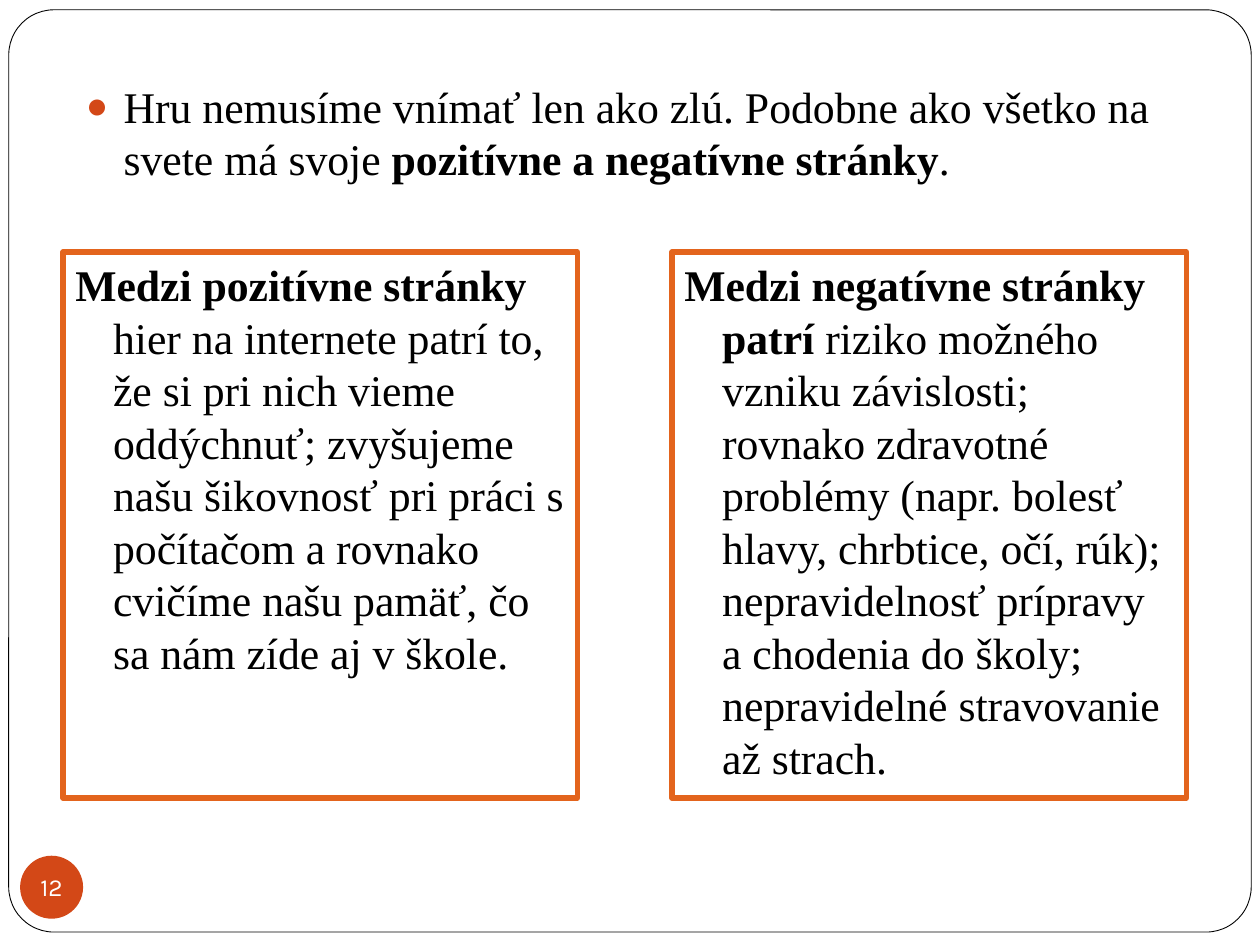
import pptx
import pptx.util
import pptx.dml.color
import pptx.enum.shapes
import pptx.enum.text
import lxml.etree
from pptx.util import Pt

RGBColor = pptx.dml.color.RGBColor
Shape = pptx.enum.shapes.MSO_SHAPE
WHITE = RGBColor(0xFF, 0xFF, 0xFF)
BLACK = RGBColor(0, 0, 0)
ORANGE = RGBColor(0xE3, 0x64, 0x1D)
RUST = RGBColor(0xD3, 0x48, 0x17)

INTRO = [
    ("Hru nemusíme vnímať len ako zlú. Podobne ako všetko na svete má svoje ", False),
    ("pozitívne a negatívne stránky", True),
    (".", False),
]
SIDES = [
    [
        ("Medzi pozitívne stránky", True),
        (" hier na internete patrí to, že si pri nich vieme oddýchnuť; "
         "zvyšujeme našu šikovnosť pri práci s počítačom a rovnako "
         "cvičíme našu pamäť, čo sa nám zíde aj v škole.", False),
    ],
    [
        ("Medzi negatívne stránky patrí", True),
        (" riziko možného vzniku závislosti; rovnako zdravotné problémy "
         "(napr. bolesť hlavy, chrbtice, očí, rúk); nepravidelnosť prípravy "
         "a chodenia do školy; nepravidelné stravovanie až strach.", False),
    ],
]


def format_span(span, font, size, color, bold=False):
    span.font.name = font
    span.font.size = Pt(size)
    span.font.color.rgb = color
    span.font.bold = bold


def add_shape(page, kind, left, top, width, height, fill=None, line=None, weight=0):
    shape = page.shapes.add_shape(kind, Pt(left), Pt(top), Pt(width), Pt(height))
    shape.shadow.inherit = False
    if fill is None:
        shape.fill.background()
    else:
        shape.fill.solid()
        shape.fill.fore_color.rgb = fill
    if line is None:
        shape.line.fill.background()
    else:
        shape.line.color.rgb = line
        shape.line.width = Pt(weight)
    return shape


def write_hanging(box, parts):
    frame = box.text_frame
    frame.word_wrap = True
    frame.vertical_anchor = pptx.enum.text.MSO_ANCHOR.TOP
    para = frame.paragraphs[0]
    para.alignment = pptx.enum.text.PP_ALIGN.LEFT
    para.line_spacing = Pt(30)
    para.space_before = Pt(5.8)
    for text, bold in parts:
        span = para.add_run()
        span.text = text
        format_span(span, "Times New Roman", 25, BLACK, bold)
    properties = para._p.get_or_add_pPr()
    properties.set("marL", str(Pt(21.6)))
    properties.set("indent", str(-Pt(21.6)))
    return properties


def add_bullet(properties):
    namespace = pptx.oxml.ns.qn
    color = lxml.etree.SubElement(properties, namespace("a:buClr"))
    lxml.etree.SubElement(color, namespace("a:srgbClr"), val=str(RUST))
    lxml.etree.SubElement(properties, namespace("a:buSzPct"), val="85000")
    lxml.etree.SubElement(properties, namespace("a:buFont"), typeface="Times New Roman")
    lxml.etree.SubElement(properties, namespace("a:buChar"), char="●")


def add_frame(page):
    frame = add_shape(page, Shape.ROUNDED_RECTANGLE, 5, 5.6, 710, 527, WHITE, BLACK, 0.5)
    frame.adjustments[0] = 0.049


def add_intro(page):
    box = page.shapes.add_textbox(Pt(42), Pt(42), Pt(648), Pt(72))
    add_bullet(write_hanging(box, INTRO))


def add_side(page, left, parts):
    box = add_shape(page, Shape.RECTANGLE, left, 144, 294, 312, line=ORANGE, weight=3)
    write_hanging(box, parts)


def add_page_number(page, number):
    badge = add_shape(page, Shape.OVAL, 11.5, 489, 36, 36, RUST)
    frame = badge.text_frame
    frame.margin_left = frame.margin_right = frame.margin_top = frame.margin_bottom = 0
    frame.word_wrap = False
    frame.vertical_anchor = pptx.enum.text.MSO_ANCHOR.MIDDLE
    frame.text = number
    para = frame.paragraphs[0]
    para.alignment = pptx.enum.text.PP_ALIGN.CENTER
    format_span(para.runs[0], "Karla", 14, WHITE)


def main():
    deck = pptx.Presentation()
    deck.slide_width, deck.slide_height = Pt(720), Pt(540)
    page = deck.slides.add_slide(deck.slide_layouts[6])
    add_frame(page)
    add_intro(page)
    for column, parts in enumerate(SIDES):
        add_side(page, 36 + column * 348, parts)
    add_page_number(page, "12")
    deck.save("out.pptx")


if __name__ == "__main__":
    main()
